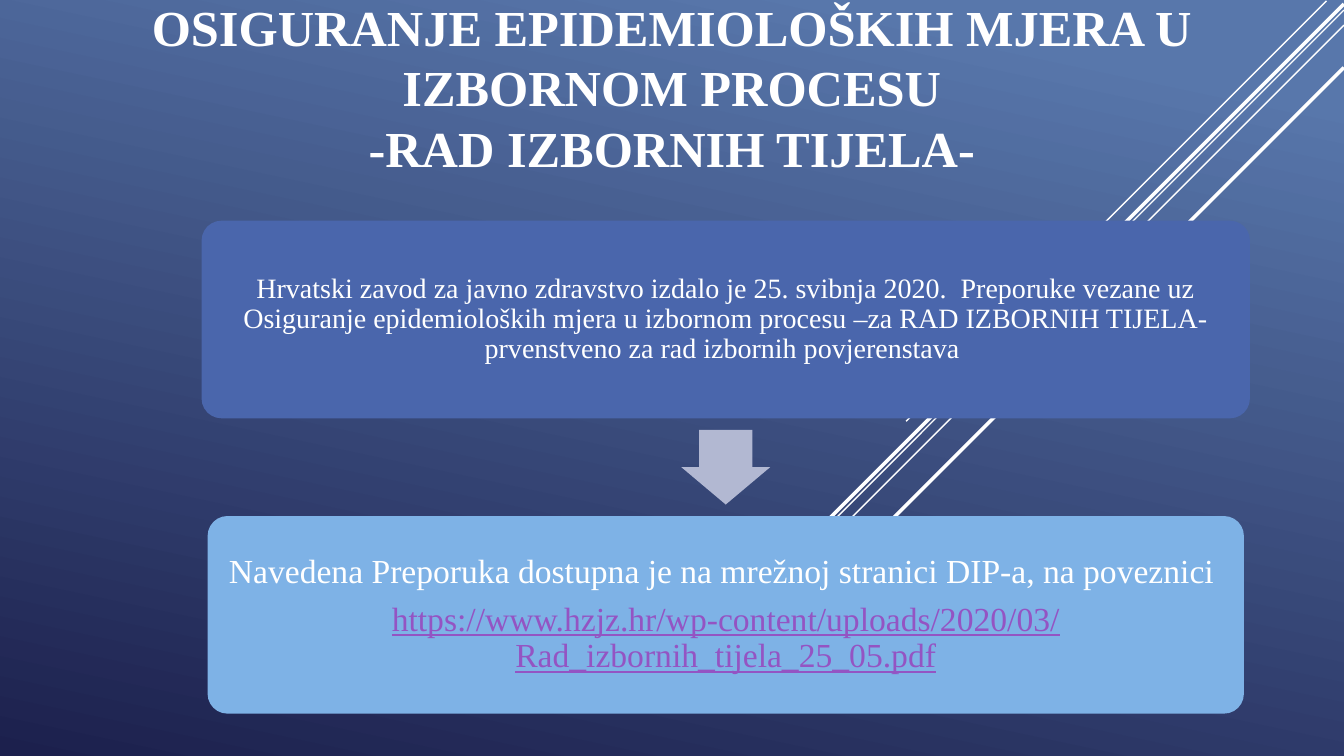
from lxml.etree import SubElement
from pptx import Presentation
from pptx.dml.color import RGBColor
from pptx.enum.shapes import MSO_CONNECTOR as Connector, MSO_SHAPE as Shape
from pptx.enum.text import MSO_ANCHOR as Anchor, PP_ALIGN as Align
from pptx.oxml.ns import qn
from pptx.util import Inches, Pt

WIDTH, HEIGHT = Inches(13.333), Inches(7.5)
FONT = "Times New Roman"

WHITE = RGBColor(0xFF, 0xFF, 0xFF)
SKY = RGBColor(0x58, 0x77, 0xAB)
NIGHT = RGBColor(0x1C, 0x20, 0x4D)
ROYAL = RGBColor(0x4A, 0x66, 0xAC)
LIGHT_BLUE = RGBColor(0x7E, 0xB2, 0xE6)
ARROW_GREY = RGBColor(0xB2, 0xB8, 0xD2)
LINK = RGBColor(0x94, 0x54, 0xC3)

# Start across and down, length down (percent of the slide), width in points
STRIPES = [
    (98.7, 0.13, 55.6, 1),
    (100, 1.33, 88.67, 1),
    (100, 3.33, 72.27, 1),
    (100, 0.53, 70.67, 2.5),
    (100, 8.93, 63.33, 2.5),
]

TITLE = ["OSIGURANJE EPIDEMIOLOŠKIH MJERA U IZBORNOM PROCESU", "-RAD IZBORNIH TIJELA-"]
ISSUED = (
    "Hrvatski zavod za javno zdravstvo izdalo je 25. svibnja 2020.  Preporuke vezane uz "
    "Osiguranje epidemioloških mjera u izbornom procesu –za RAD IZBORNIH TIJELA-"
    "prvenstveno za rad izbornih povjerenstava "
)
AVAILABLE = "Navedena Preporuka dostupna je na mrežnoj stranici DIP-a, na poveznici "
ADDRESS = "https://www.hzjz.hr/wp-content/uploads/2020/03/Rad_izbornih_tijela_25_05.pdf"


def across(percent):
    return round(WIDTH * percent / 100)


def down(percent):
    return round(HEIGHT * percent / 100)


def place(left, top, width, height):
    return across(left), down(top), across(width), down(height)


def paint_background(page):
    fill = page.background.fill
    fill.gradient()
    fill.gradient_angle = 258
    for stop, color, position in zip(fill.gradient_stops, (SKY, NIGHT), (0.1, 1)):
        stop.color.rgb = color
        stop.position = position


def add_stripe(page, start_x, start_y, length, weight):
    """Draw a white line that falls to the left at 45 degrees."""
    x, y, run = across(start_x), down(start_y), down(length)
    line = page.shapes.add_connector(Connector.STRAIGHT, x, y, x - run, y + run)
    line.line.color.rgb = WHITE
    line.line.width = Pt(weight)
    SubElement(line._element.spPr, qn("a:effectLst"))


def add_flat_shape(page, kind, area, color, adjustments):
    shape = page.shapes.add_shape(kind, *place(*area))
    shape.shadow.inherit = False
    shape.fill.solid()
    shape.fill.fore_color.rgb = color
    shape.line.fill.background()
    for index, value in enumerate(adjustments):
        shape.adjustments[index] = value
    return shape


def add_run(para, text, size, color=WHITE, bold=False, underline=False):
    run = para.add_run()
    run.text = text
    font = run.font
    font.name, font.size, font.bold, font.underline = FONT, Pt(size), bold, underline
    font.color.rgb = color


def add_title(page):
    box = page.shapes.add_textbox(*place(0, 3.47, 100, 20.67))
    frame = box.text_frame
    frame.word_wrap = True
    frame.vertical_anchor = Anchor.BOTTOM
    para = frame.paragraphs[0]
    para.alignment = Align.CENTER
    first, second = TITLE
    add_run(para, first, 36, bold=True)
    para.add_line_break()
    add_run(para, second, 36, bold=True)


def add_panel(page, area, color, margin, size, lines):
    """Add a rounded panel; lines holds the text, colour and underline of each paragraph."""
    frame = add_flat_shape(page, Shape.ROUNDED_RECTANGLE, area, color, [0.1]).text_frame
    frame.word_wrap = True
    frame.vertical_anchor = Anchor.MIDDLE
    frame.margin_left = frame.margin_right = Inches(margin)
    frame.margin_top = frame.margin_bottom = Inches(margin)
    for index, (text, text_color, underline) in enumerate(lines):
        para = frame.add_paragraph() if index else frame.paragraphs[0]
        para.alignment = Align.CENTER
        para.line_spacing = 0.9
        para.space_after = Pt(size * 0.35)
        add_run(para, text, size, text_color, underline=underline)


def main():
    deck = Presentation()
    deck.slide_width, deck.slide_height = WIDTH, HEIGHT
    page = deck.slides.add_slide(deck.slide_layouts[6])
    paint_background(page)
    for stripe in STRIPES:
        add_stripe(page, *stripe)
    add_title(page)
    add_panel(page, (15, 29.2, 78, 26.13), ROYAL, 0.08, 20, [(ISSUED, WHITE, False)])
    add_flat_shape(page, Shape.DOWN_ARROW, (50.7, 56.87, 6.6, 9.87), ARROW_GREY, [0.6, 0.5])
    add_panel(page, (15.45, 68.27, 77.1, 26.13), LIGHT_BLUE, 0.1, 24,
              [(AVAILABLE, WHITE, False), (ADDRESS, LINK, True)])
    deck.save("out.pptx")


if __name__ == "__main__":
    main()
